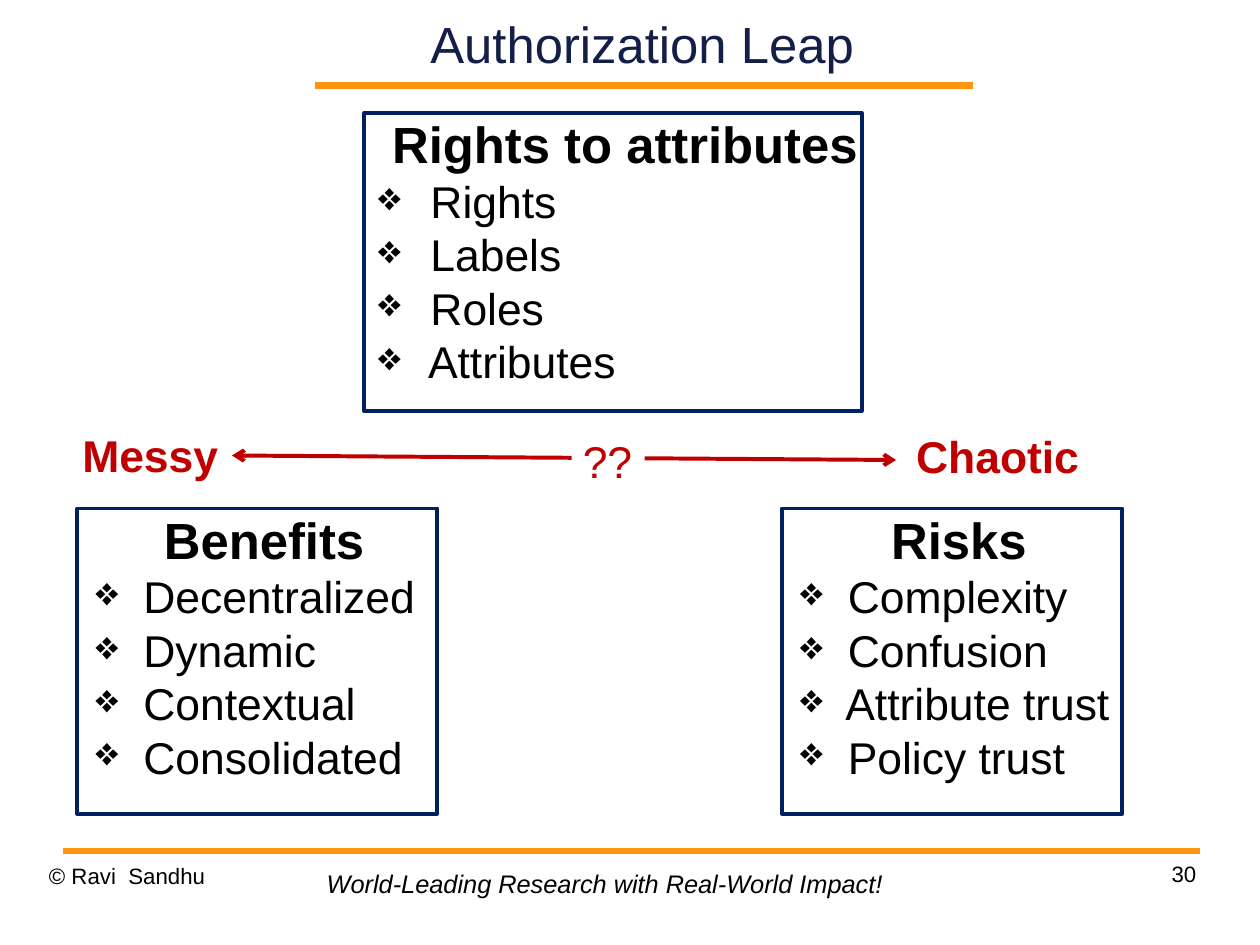
from lxml.etree import SubElement
from pptx import Presentation
from pptx.dml.color import RGBColor
from pptx.enum.shapes import MSO_CONNECTOR as LINK, MSO_SHAPE as PRESET
from pptx.enum.text import MSO_ANCHOR as ANCHOR, PP_ALIGN as ALIGN
from pptx.oxml.ns import qn
from pptx.util import Cm, Inches, Pt

ORANGE = RGBColor(0xFF, 0x95, 0x0E)
NAVY = RGBColor(0x00, 0x20, 0x60)
TITLE_BLUE = RGBColor(0x13, 0x1F, 0x49)
RED = RGBColor(0xC0, 0x00, 0x00)
BLACK = RGBColor(0, 0, 0)
WHITE = RGBColor(0xFF, 0xFF, 0xFF)

deck = Presentation()
deck.slide_width, deck.slide_height = Cm(28), Cm(21)
slide = deck.slides.add_slide(deck.slide_layouts[6])
COL, ROW = deck.slide_width / 100, deck.slide_height / 100


def write(paragraph, text, size, color=BLACK, bold=False, italic=False, align=ALIGN.LEFT):
    paragraph.text = text
    paragraph.alignment = align
    font = paragraph.font
    font.name, font.size, font.bold, font.italic = "Arial", Pt(size), bold, italic
    font.color.rgb = color


def draw_line(x1, y1, x2, y2, color, width):
    line = slide.shapes.add_connector(
        LINK.STRAIGHT, int(x1 * COL), int(y1 * ROW), int(x2 * COL), int(y2 * ROW))
    line.line.color.rgb = color
    line.line.width = Pt(width)
    SubElement(line._element.spPr, qn("a:effectLst"))
    return line


draw_line(25.04, 9.05, 77.2, 9.05, ORANGE, 4.31)
draw_line(4.98, 90.05, 95.25, 90.05, ORANGE, 4.31)

topics = [
    (28.92, 11.95, 39.46, 31.56, " Rights to attributes", ALIGN.LEFT, 0.35,
     ["Rights", "Labels", "Roles", "Attributes"]),
    (6.14, 53.81, 28.57, 32.29, "Benefits", ALIGN.CENTER, 0.31,
     ["Decentralized", "Dynamic", "Contextual", "Consolidated"]),
    (62.05, 53.81, 27.03, 32.29, "Risks", ALIGN.CENTER, 0.31,
     ["Complexity", "Confusion", "Attribute trust", "Policy trust"]),
]
for x, y, w, h, heading, align, hanging, points in topics:
    topic = slide.shapes.add_shape(
        PRESET.RECTANGLE, int(x * COL), int(y * ROW), int(w * COL), int(h * ROW))
    topic.shadow.inherit = False
    topic.fill.background()
    topic.line.color.rgb = NAVY
    topic.line.width = Pt(2.5)
    frame = topic.text_frame
    frame.word_wrap = True
    frame.vertical_anchor = ANCHOR.TOP
    frame.margin_left = frame.margin_right = frame.margin_top = frame.margin_bottom = 0
    first = frame.paragraphs[0]
    first_props = first._p.get_or_add_pPr()
    first_props.set("marL", str(Inches(0.47)))
    first_props.set("indent", str(-Inches(0.35)))
    write(first, heading, 32, bold=True, align=align)
    for point in points:
        item = frame.add_paragraph()
        props = item._p.get_or_add_pPr()
        props.set("marL", str(Inches(0.47)))
        props.set("indent", str(-Inches(hanging)))
        SubElement(SubElement(props, qn("a:buClr")), qn("a:srgbClr"), val=str(BLACK))
        SubElement(props, qn("a:buSzPct"), val="90000")
        SubElement(props, qn("a:buFont"), typeface="OpenSymbol")
        SubElement(props, qn("a:buChar"), char="❖")
        write(item, " " + point, 28)

leap = draw_line(18.42, 48.2, 71.12, 48.68, RED, 2.5)
for end in ("a:headEnd", "a:tailEnd"):
    SubElement(leap.line._get_or_add_ln(), qn(end), type="arrow")

labels = [
    (21.83, 0, 58.33, 9.07, "Authorization Leap", 32, TITLE_BLUE, False, False, ALIGN.CENTER, True),
    (3.88, 91.29, 23.31, 6.89, "© Ravi  Sandhu", 14, BLACK, False, False, ALIGN.LEFT, True),
    (71.64, 91.05, 23.31, 6.89, "30", 14, BLACK, False, False, ALIGN.RIGHT, True),
    (25.04, 91.29, 46.08, 4.47, "World-Leading Research with Real-World Impact!",
     16, BLACK, False, True, ALIGN.LEFT, False),
    (5.64, 44.74, 12.79, 6.89, "Messy", 28, RED, True, False, ALIGN.LEFT, False),
    (71.82, 44.8, 14.88, 6.89, "Chaotic", 28, RED, True, False, ALIGN.LEFT, False),
    (45.36, 45.3, 5.81, 6.89, "??", 28, RED, False, False, ALIGN.LEFT, False),
]
for x, y, w, h, text, size, color, bold, italic, align, flush in labels:
    label = slide.shapes.add_textbox(int(x * COL), int(y * ROW), int(w * COL), int(h * ROW))
    frame = label.text_frame
    frame.word_wrap = flush
    if flush:
        frame.margin_left = frame.margin_right = frame.margin_top = frame.margin_bottom = 0
    if text == "Authorization Leap":
        frame.vertical_anchor = ANCHOR.MIDDLE
    if text == "??":
        label.fill.solid()
        label.fill.fore_color.rgb = WHITE
    write(frame.paragraphs[0], text, size, color, bold, italic, align)

deck.save("out.pptx")
